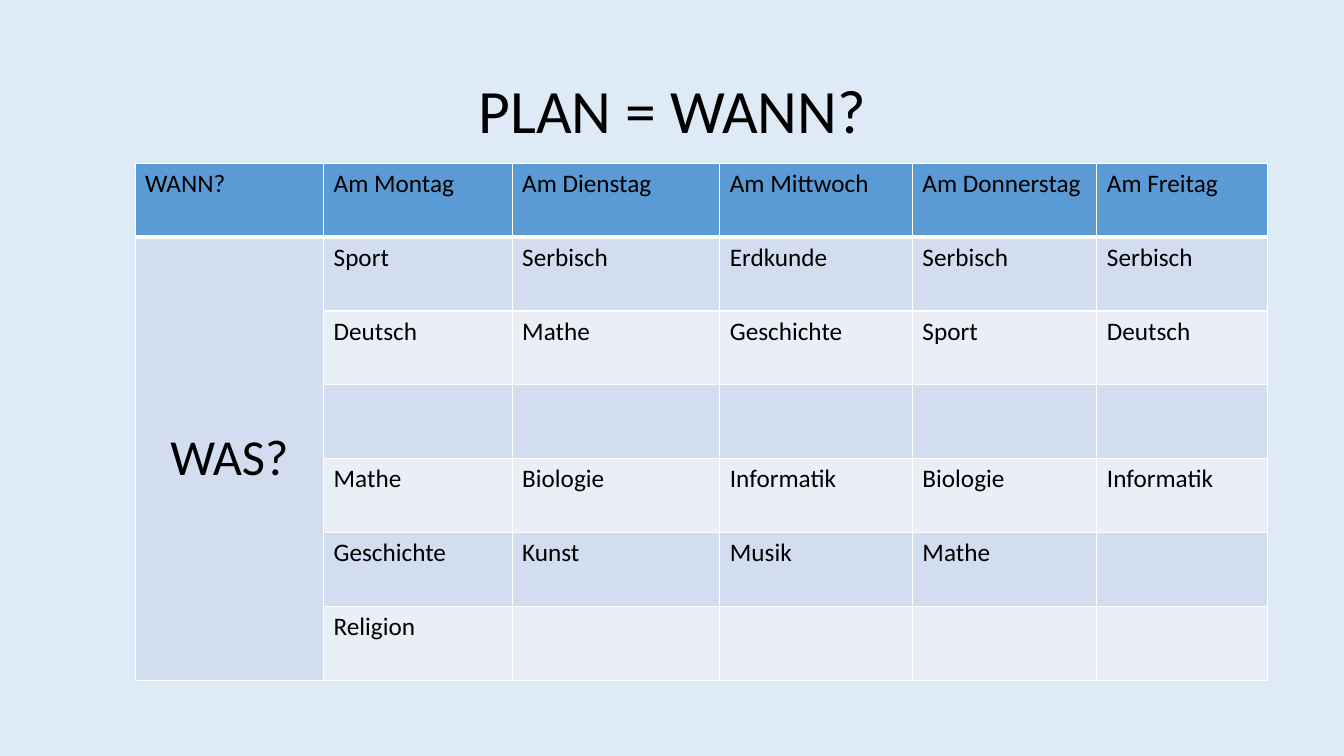
from lxml import etree
from pptx import Presentation
from pptx.dml.color import RGBColor
from pptx.enum.text import MSO_ANCHOR, PP_ALIGN
from pptx.oxml.ns import qn
from pptx.util import Inches, Pt

CENTER, LEFT = PP_ALIGN.CENTER, PP_ALIGN.LEFT
MIDDLE, TOP = MSO_ANCHOR.MIDDLE, MSO_ANCHOR.TOP
TITLE_ONLY = 5

DAYS = ["WANN?", "Am Montag", "Am Dienstag", "Am Mittwoch", "Am Donnerstag", "Am Freitag"]
LESSONS = [
    ["WAS?", "Sport", "Serbisch", "Erdkunde", "Serbisch", "Serbisch"],
    ["", "Deutsch", "Mathe", "Geschichte", "Sport", "Deutsch"],
    ["", "", "", "", "", ""],
    ["", "Mathe", "Biologie", "Informatik", "Biologie", "Informatik"],
    ["", "Geschichte", "Kunst", "Musik", "Mathe", ""],
    ["", "Religion", "", "", "", ""],
]
COLUMN_WIDTHS = [1.87, 1.87, 2.06, 1.91, 1.83, 1.69]
ROW_HEIGHT = 5.13 / 7


def color(hex_text):
    return RGBColor.from_string(hex_text)


class PlanSlide:
    font_name = "Calibri"
    ink, line = "000000", "FFFFFF"
    background, header = "DEEBF7", "5B9BD5"
    bands = ["D2DEEF", "EAEFF7"]

    def __init__(self, deck):
        self.slide = deck.slides.add_slide(deck.slide_layouts[TITLE_ONLY])
        fill = self.slide.background.fill
        fill.solid()
        fill.fore_color.rgb = color(self.background)

    def style(self, paragraph, size, align):
        paragraph.alignment = align
        paragraph.font.name = self.font_name
        paragraph.font.size = Pt(size)
        paragraph.font.color.rgb = color(self.ink)

    def title(self, text, left, top, width, height):
        heading = self.slide.shapes.title
        heading.left, heading.top = Inches(left), Inches(top)
        heading.width, heading.height = Inches(width), Inches(height)
        frame = heading.text_frame
        frame.text = text
        frame.word_wrap = True
        frame.vertical_anchor = MIDDLE
        frame.paragraphs[0].line_spacing = 0.9
        self.style(frame.paragraphs[0], 44, CENTER)

    def borders(self, cell, bottom):
        properties = cell._tc.get_or_add_tcPr()
        for side, width in (("L", 1), ("R", 1), ("T", 1), ("B", bottom)):
            edge = etree.SubElement(properties, qn(f"a:ln{side}"), w=str(Pt(width)))
            solid = etree.SubElement(edge, qn("a:solidFill"))
            etree.SubElement(solid, qn("a:srgbClr"), val=self.line)

    def cell(self, cell, text, fill, size=18, align=LEFT, anchor=TOP, bottom=1):
        cell.text = text
        cell.vertical_anchor = anchor
        self.style(cell.text_frame.paragraphs[0], size, align)
        self.borders(cell, bottom)
        cell.fill.solid()
        cell.fill.fore_color.rgb = color(fill)

    def timetable(self, left, top):
        timetable = self.slide.shapes.add_table(
            len(LESSONS) + 1, len(DAYS), Inches(left), Inches(top),
            Inches(sum(COLUMN_WIDTHS)), Inches(ROW_HEIGHT * (len(LESSONS) + 1))).table
        for column, width in zip(timetable.columns, COLUMN_WIDTHS):
            column.width = Inches(width)
        for row in timetable.rows:
            row.height = Inches(ROW_HEIGHT)

        # Weekdays
        for c, day in enumerate(DAYS):
            self.cell(timetable.cell(0, c), day, self.header, bottom=3)

        # Lessons, with one tall label cell on the left
        for r, lessons in enumerate(LESSONS, 1):
            band = self.bands[(r - 1) % 2]
            for c, lesson in enumerate(lessons):
                label = {"size": 36, "align": CENTER, "anchor": MIDDLE} if (r, c) == (1, 0) else {}
                self.cell(timetable.cell(r, c), lesson, band, **label)
        timetable.cell(1, 0).merge(timetable.cell(len(LESSONS), 0))


def main():
    deck = Presentation()
    deck.slide_width, deck.slide_height = Inches(13.33), Inches(7.5)
    plan = PlanSlide(deck)
    plan.title("PLAN = WANN?", 0.92, 0.4, 11.5, 1.45)
    plan.timetable(1.34, 1.62)
    deck.save("out.pptx")


if __name__ == "__main__":
    main()
